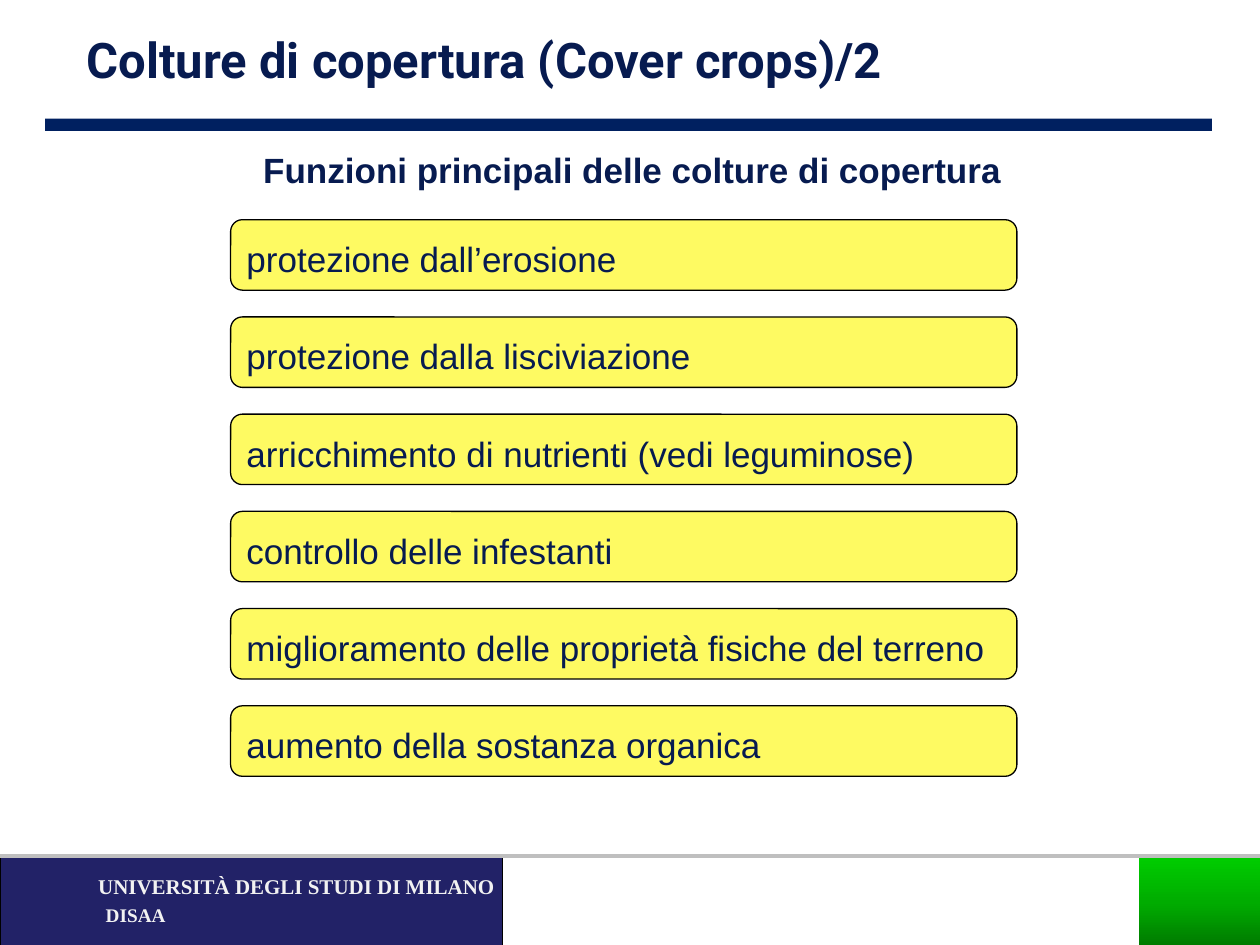
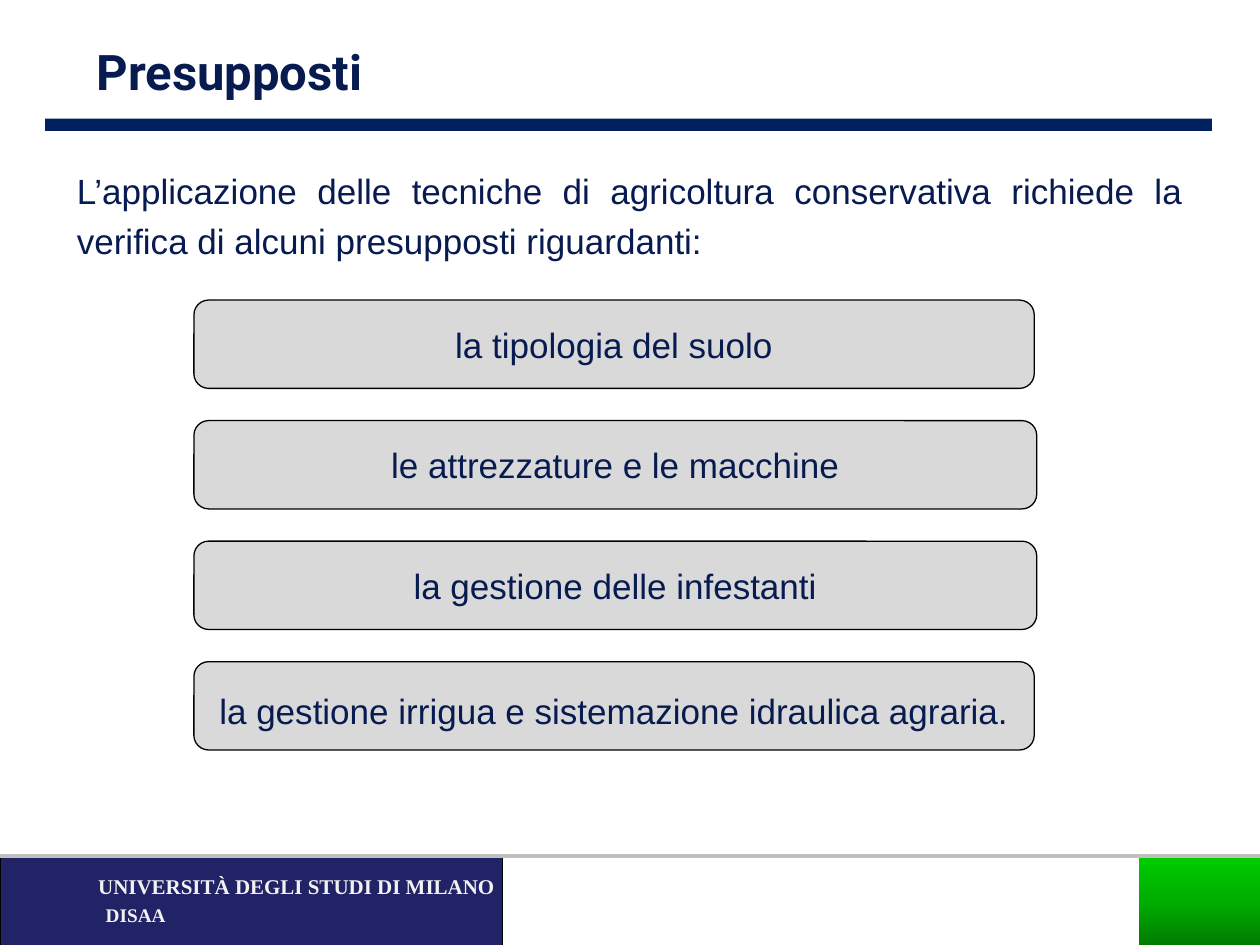
from copy import deepcopy

from pptx import Presentation
from pptx.dml.color import RGBColor
from pptx.enum import shapes, text
from pptx.oxml import ns
from pptx.util import Cm, Pt
from lxml import etree

COLOURS = {
    "ink": "071B50", "rule": "002060", "footer": "222267", "footer_text": "F2F2F2",
    "footer_line": "BFBFBF", "outline": "000000", "yellow": "FEFA62", "grey": "D9D9D9",
    "green_dark": "007900", "green_mid": "00AC00", "green_light": "00CC00",
}
PALETTE = {name: RGBColor.from_string(value) for name, value in COLOURS.items()}

# Text styles: font attributes
TITLE = {"name": "Roboto", "size": Pt(28), "bold": True}
BODY = {"name": "Arial", "size": Pt(20), "bold": False}
HEADING = {**BODY, "bold": True}
UNIVERSITY = {"name": "Times New Roman", "size": Pt(12), "bold": True}
DEPARTMENT = {**UNIVERSITY, "size": Pt(11)}

# Paragraph formats
PLAIN = {"alignment": text.PP_ALIGN.LEFT}
SPACED = {"alignment": text.PP_ALIGN.LEFT, "line_spacing": 1.2}
CENTRED = {"alignment": text.PP_ALIGN.CENTER}
CENTRED_SPACED = {**CENTRED, "line_spacing": 1.2}
JUSTIFIED = {"alignment": text.PP_ALIGN.JUSTIFY, "line_spacing": 1.2, "space_after": Pt(6)}


def add_block(slide, place, fill, outline=None, preset=shapes.MSO_SHAPE.RECTANGLE):
    shape = slide.shapes.add_shape(preset, *map(Cm, place))
    shape.shadow.inherit = False
    shape.fill.solid()
    shape.fill.fore_color.rgb = PALETTE[fill]
    if outline:
        shape.line.color.rgb = PALETTE[outline]
        shape.line.width = Pt(0.75)
    else:
        shape.line.fill.background()
    return shape


def write(shape, words, style, layout, colour="ink", anchor=text.MSO_ANCHOR.TOP):
    frame = shape.text_frame
    frame.word_wrap = True
    frame.vertical_anchor = anchor
    paragraph = frame.paragraphs[0]
    for name, value in layout.items():
        setattr(paragraph, name, value)
    run = paragraph.add_run()
    run.text = words
    for name, value in style.items():
        setattr(run.font, name, value)
    run.font.color.rgb = PALETTE[colour]


presentation = Presentation()
presentation.slide_width, presentation.slide_height = Cm(25.4), Cm(19.05)

# Each slide: title, its place, lead text, its place, style and layout
pages = [
    ("Colture di copertura (Cover crops)/2", (1.5, 0.48, 22.2, 1.45),
     "Funzioni principali delle colture di copertura", (1, 2.7, 23.5, 1.2),
     HEADING, CENTRED_SPACED),
    ("Presupposti", (1.7, 0.71, 22.2, 1.45),
     "L’applicazione delle tecniche di agricoltura conservativa richiede la verifica "
     "di alcuni presupposti riguardanti:", (1.3, 3.12, 22.8, 2.2),
     BODY, JUSTIFIED),
]

for title, title_place, lead, lead_place, lead_style, lead_layout in pages:
    slide = presentation.slides.add_slide(presentation.slide_layouts[6])

    # Footer band and line
    add_block(slide, (0, 17.25, 10.13, 1.82), "footer", "outline")
    footer_line = slide.shapes.add_connector(
        shapes.MSO_CONNECTOR.STRAIGHT, 0, Cm(17.25), Cm(25.4), Cm(17.25))
    footer_line.line.color.rgb = PALETTE["footer_line"]
    footer_line.line.width = Pt(2.25)
    etree.SubElement(footer_line._element.spPr, ns.qn("a:effectLst"))

    # Rule below the title
    add_block(slide, (0.91, 2.39, 23.52, 0.25), "rule")

    # Green corner, dark at the bottom
    corner = add_block(slide, (22.96, 17.3, 2.46, 1.8), "green_dark")
    corner.fill.gradient()
    corner.fill.gradient_angle = 90
    stop_list = corner._element.spPr.find(".//" + ns.qn("a:gsLst"))
    stop_list.insert(1, deepcopy(stop_list[0]))
    greens = [(0, "green_dark"), (0.5, "green_mid"), (1, "green_light")]
    for stop, (position, green) in zip(corner.fill.gradient_stops, greens):
        stop.position = position
        stop.color.rgb = PALETTE[green]

    # Footer, lead and title text
    for words, place, style, layout, colour in [
        ("DISAA", (1.88, 18, 2.5, 0.94), DEPARTMENT, SPACED, "footer_text"),
        ("UNIVERSITÀ DEGLI STUDI DI MILANO", (1.73, 17.38, 8.97, 0.94),
         UNIVERSITY, SPACED, "footer_text"),
        (lead, lead_place, lead_style, lead_layout, "ink"),
        (title, title_place, TITLE, PLAIN, "ink"),
    ]:
        write(slide.shapes.add_textbox(*map(Cm, place)), words, style, layout, colour)

functions_slide, conditions_slide = presentation.slides

# Functions of cover crops
functions = [
    "protezione dall’erosione",
    "protezione dalla lisciviazione",
    "arricchimento di nutrienti (vedi leguminose)",
    "controllo delle infestanti",
    "miglioramento delle proprietà fisiche del terreno",
    "aumento della sostanza organica",
]
for row, words in enumerate(functions):
    box = add_block(functions_slide, (4.65, 4.43 + 1.96 * row, 15.85, 1.42),
                    "yellow", "outline", shapes.MSO_SHAPE.ROUNDED_RECTANGLE)
    write(box, words, BODY, SPACED)

# Conditions to verify: width and layout per row
conditions = [
    ("la tipologia del suolo", 16.94, CENTRED),
    ("le attrezzature e le macchine", 16.99, CENTRED),
    ("la gestione delle infestanti", 16.99, CENTRED),
    ("la gestione irrigua e sistemazione idraulica agraria.", 16.94, CENTRED_SPACED),
]
for row, (words, width, layout) in enumerate(conditions):
    box = add_block(conditions_slide, (3.91, 6.05 + 2.43 * row, width, 1.78),
                    "grey", "outline", shapes.MSO_SHAPE.ROUNDED_RECTANGLE)
    write(box, words, BODY, layout, anchor=text.MSO_ANCHOR.MIDDLE)

presentation.save("out.pptx")
